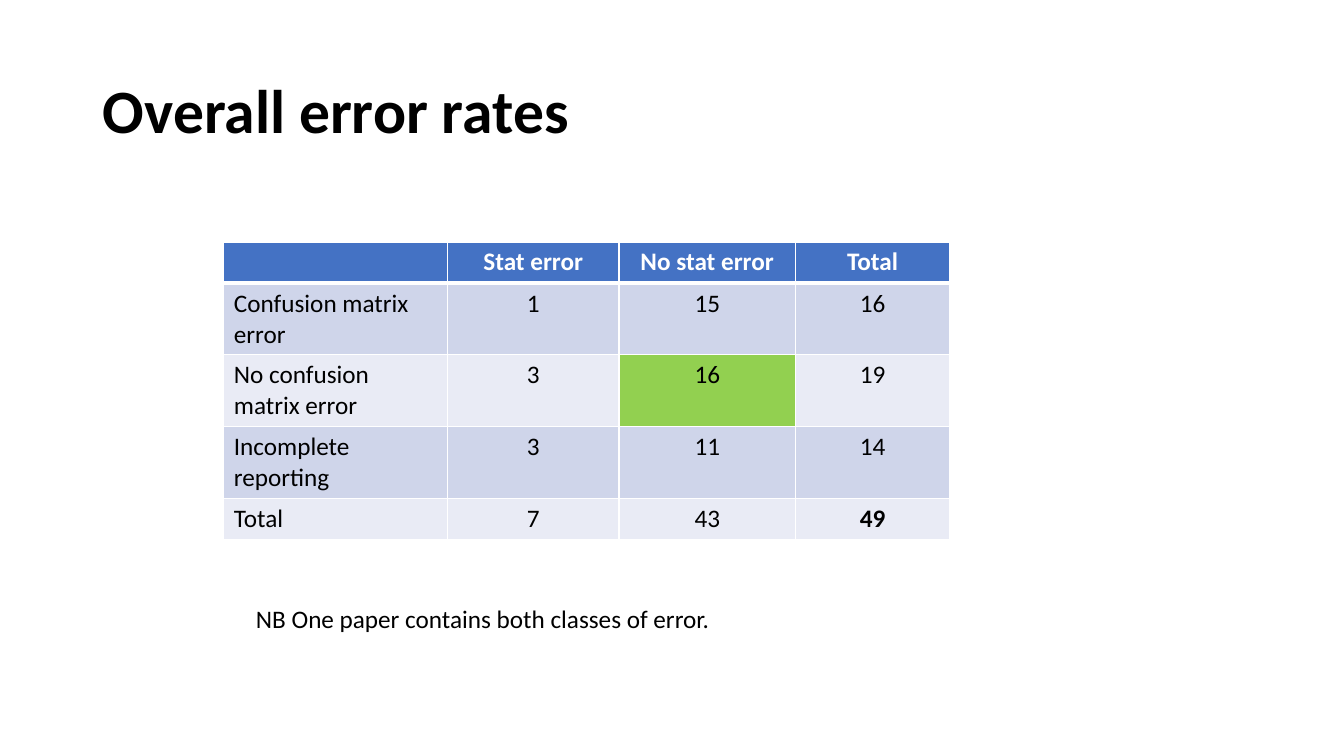
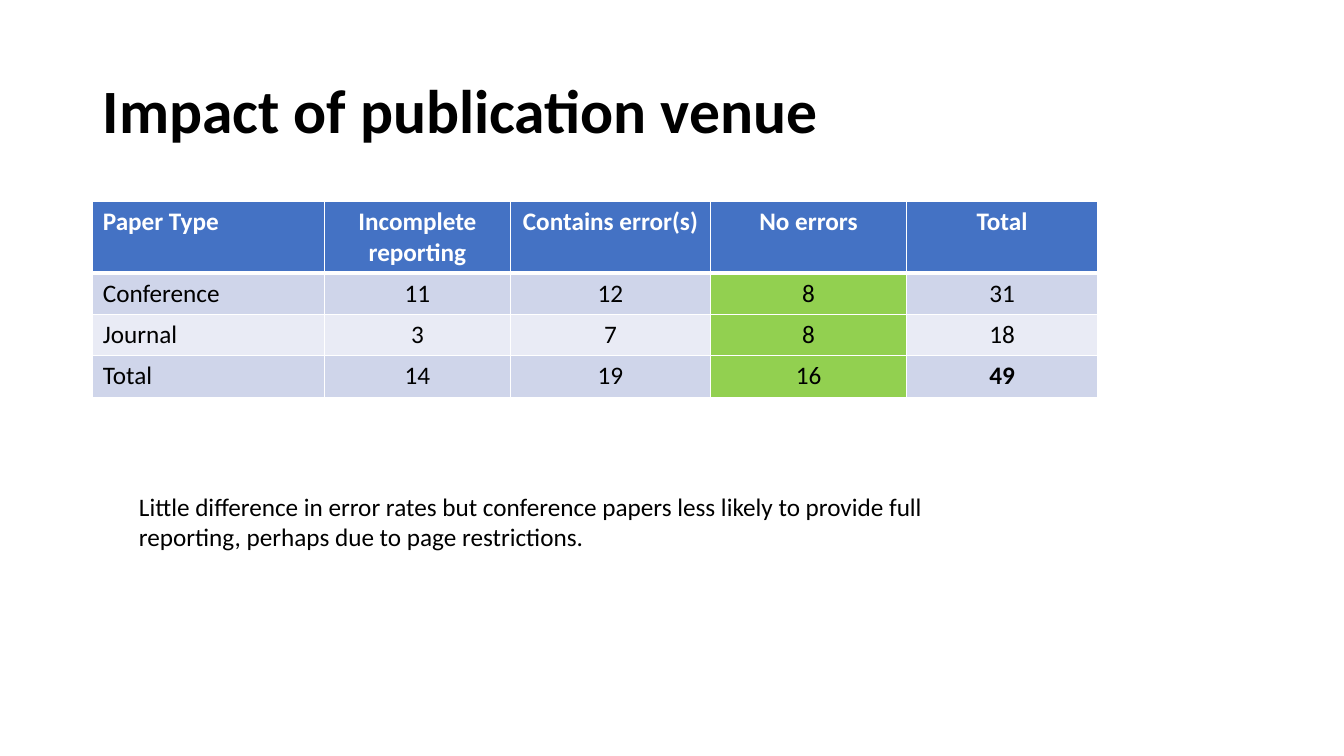
from lxml.etree import SubElement
from pptx import Presentation
from pptx.dml.color import RGBColor
from pptx.enum.text import MSO_ANCHOR, PP_ALIGN
from pptx.oxml.ns import qn
from pptx.util import Emu, Pt

PX = 9144  # EMU per px, 100 px to the inch
FONT = "Calibri"
COLORS = {
    "text": "000000",
    "line": "FFFFFF",
    "header": "4472C4",
    "header_text": "FFFFFF",
    "odd_row": "CFD5EA",
    "even_row": "E9EBF5",
    "highlight": "92D050",
}
PAGE_SIZE = (1333, 750)
TITLE_BOX = (92, 40, 1150, 145)
ONE_LINE, TWO_LINES = 41, 71  # row heights

PAGES = [
    {
        "title": "Overall error rates",
        "table_at": (222, 240),
        "columns": [222, 170, 175, 153],
        "row_heights": [ONE_LINE, TWO_LINES, TWO_LINES, TWO_LINES, ONE_LINE],
        "rows": [
            ["", "Stat error", "No stat error", "Total"],
            ["Confusion matrix error", "1", "15", "16"],
            ["No confusion matrix error", "3", "16", "19"],
            ["Incomplete reporting", "3", "11", "14"],
            ["Total", "7", "43", "49"],
        ],
        "highlights": {(2, 2)},
        "note": "NB One paper contains both classes of error.",
        "note_box": (244, 594, 625, 40),
    },
    {
        "title": "Impact of publication venue",
        "table_at": (92, 200),
        "columns": [230, 184, 199, 194, 190],
        "row_heights": [TWO_LINES, ONE_LINE, ONE_LINE, ONE_LINE],
        "rows": [
            ["Paper Type", "Incomplete reporting", "Contains error(s)", "No errors", "Total"],
            ["Conference", "11", "12", "8", "31"],
            ["Journal", "3", "7", "8", "18"],
            ["Total", "14", "19", "16", "49"],
        ],
        "highlights": {(1, 3), (2, 3), (3, 3)},
        "note": "Little difference in error rates but conference papers less likely "
                "to provide full reporting, perhaps due to page restrictions.",
        "note_box": (128, 482, 809, 71),
    },
]


def px(*lengths):
    return [Emu(length * PX) for length in lengths]


def color(name):
    return RGBColor.from_string(COLORS[name])


def write(para, text, size=18, ink="text", bold=False, align=PP_ALIGN.LEFT):
    para.alignment = align
    if text:
        span = para.add_run()
        span.text = text
        span.font.name = FONT
        span.font.size = Pt(size)
        span.font.bold = bold
        span.font.color.rgb = color(ink)


def add_title(page, text):
    title = page.shapes.title
    title.left, title.top, title.width, title.height = px(*TITLE_BOX)
    title.text_frame.vertical_anchor = MSO_ANCHOR.MIDDLE
    para = title.text_frame.paragraphs[0]
    para.line_spacing = 0.9
    write(para, text, size=44, bold=True)


def set_borders(cell, row):
    """Thin white lines, with a thick one between header and body."""
    widths = {"lnL": 1, "lnR": 1, "lnT": 3 if row == 1 else 1, "lnB": 3 if row == 0 else 1}
    properties = cell._tc.get_or_add_tcPr()
    for tag, width in widths.items():
        line = SubElement(properties, qn(f"a:{tag}"), w=str(Pt(width)))
        fill = SubElement(line, qn("a:solidFill"))
        SubElement(fill, qn("a:srgbClr"), val=COLORS["line"])


def add_table(page, content):
    rows, columns, heights = content["rows"], content["columns"], content["row_heights"]
    place = px(*content["table_at"], sum(columns), sum(heights))
    table = page.shapes.add_table(len(rows), len(columns), *place).table
    for column, width in zip(table.columns, px(*columns)):
        column.width = width
    for row, height in zip(table.rows, px(*heights)):
        row.height = height

    last = (len(rows) - 1, len(columns) - 1)
    for r, texts in enumerate(rows):
        band = "header" if r == 0 else "odd_row" if r % 2 else "even_row"
        for c, text in enumerate(texts):
            cell = table.cell(r, c)
            set_borders(cell, r)
            cell.fill.solid()
            cell.fill.fore_color.rgb = color("highlight" if (r, c) in content["highlights"] else band)
            write(
                cell.text_frame.paragraphs[0],
                text,
                ink="header_text" if r == 0 else "text",
                bold=r == 0 or (r, c) == last,
                align=PP_ALIGN.CENTER if c else PP_ALIGN.LEFT,
            )


def add_note(page, text, place):
    box = page.shapes.add_textbox(*px(*place))
    box.text_frame.word_wrap = True
    write(box.text_frame.paragraphs[0], text)


def main():
    deck = Presentation()
    deck.slide_width, deck.slide_height = px(*PAGE_SIZE)
    title_only = deck.slide_layouts[5]
    for content in PAGES:
        page = deck.slides.add_slide(title_only)
        add_title(page, content["title"])
        add_table(page, content)
        add_note(page, content["note"], content["note_box"])
    deck.save("out.pptx")


if __name__ == "__main__":
    main()
